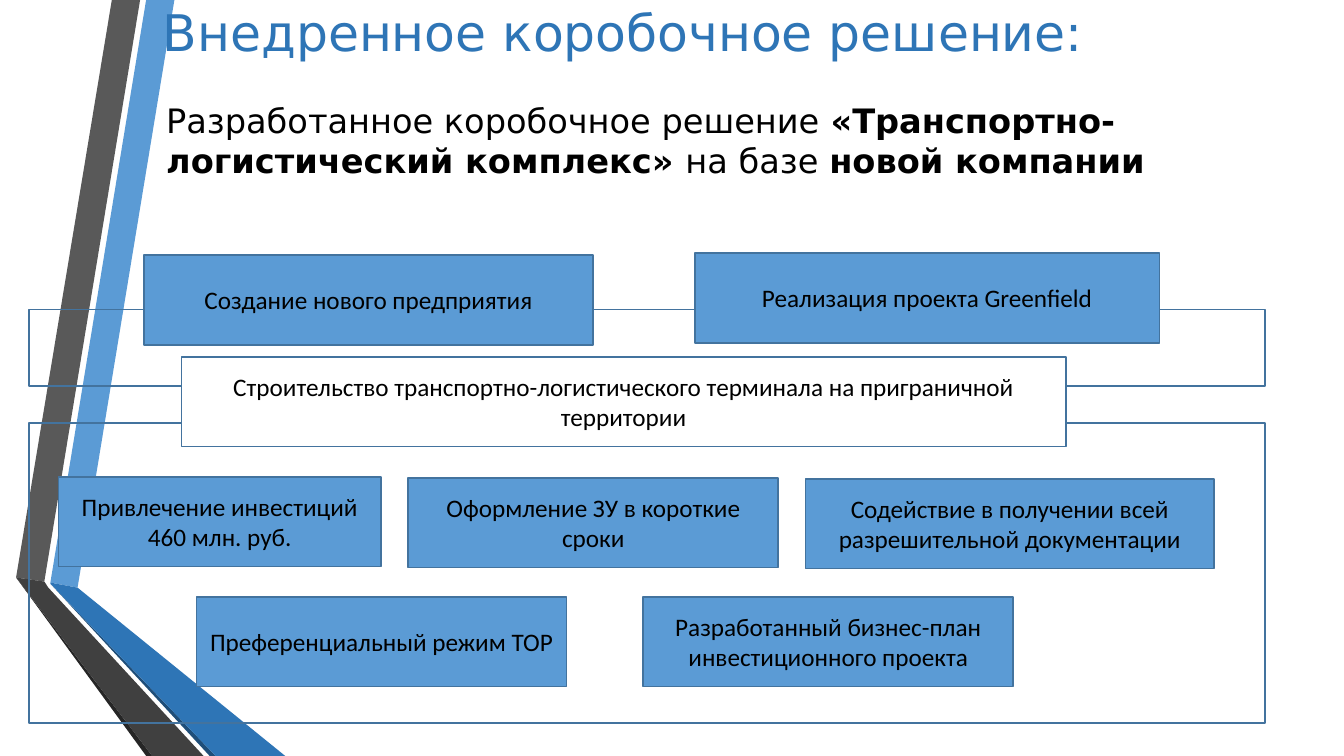
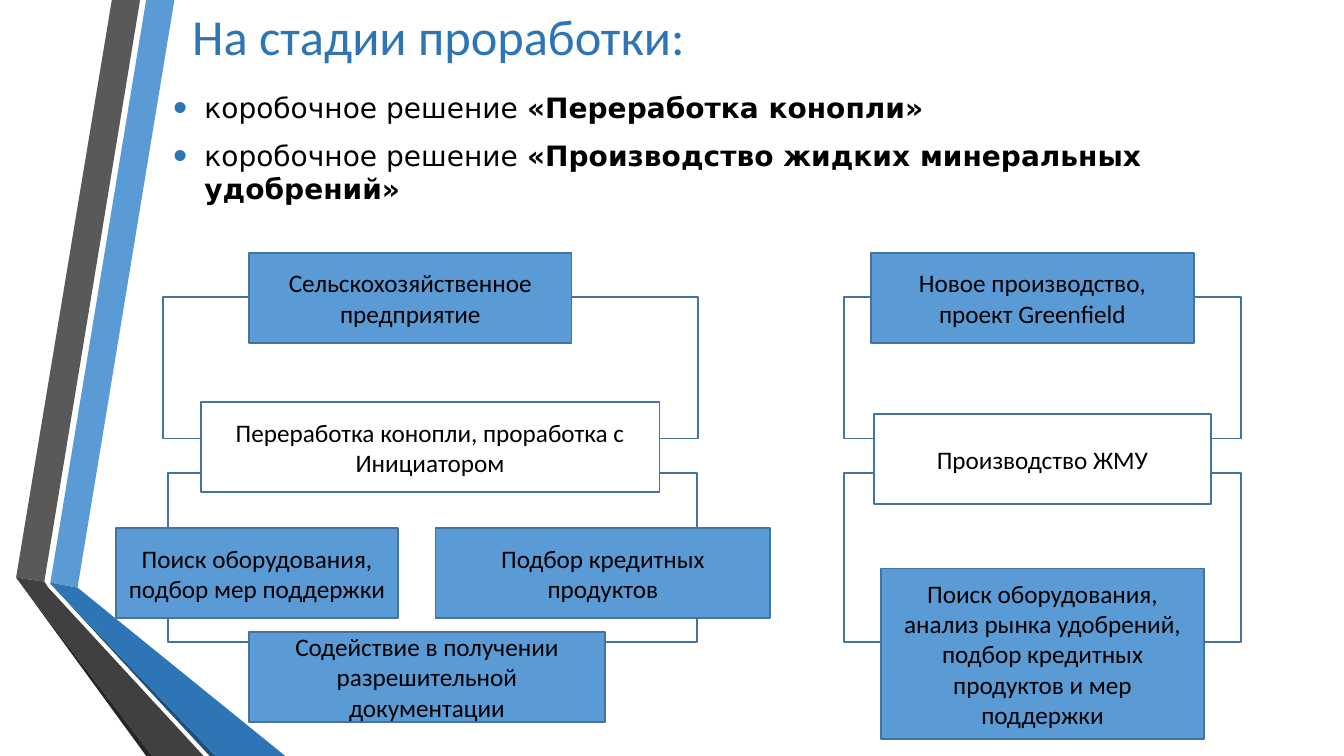
from lxml import etree
from pptx import Presentation
from pptx.dml.color import RGBColor
from pptx.enum.shapes import MSO_SHAPE as Shape
from pptx.enum.text import MSO_ANCHOR as Anchor, PP_ALIGN as Align
from pptx.oxml.ns import qn
from pptx.util import Inches, Pt

BLACK = RGBColor(0x00, 0x00, 0x00)
WHITE = RGBColor(0xFF, 0xFF, 0xFF)
BLUE = RGBColor(0x5B, 0x9B, 0xD5)
MID_BLUE = RGBColor(0x2E, 0x75, 0xB6)
DEEP_BLUE = RGBColor(0x1F, 0x4E, 0x79)
OUTLINE = RGBColor(0x43, 0x73, 0x9E)
GREY = RGBColor(0x59, 0x59, 0x59)
DARK_GREY = RGBColor(0x40, 0x40, 0x40)
NEAR_BLACK = RGBColor(0x26, 0x26, 0x26)

CALIBRI = "Calibri"
DEJAVU = "DejaVu Sans"
BOX_HEIGHT = 0.89

RIBBONS = [
    (BLUE, [(0.5, 5.78), (0.77, 5.83), (1.73, 0), (1.45, 0)]),
    (GREY, [(1.39, 0), (1.11, 0), (0.16, 5.73), (0.44, 5.77)]),
    (NEAR_BLACK, [(0.16, 5.73), (1.45, 7.5), (1.51, 7.5)]),
    (DEEP_BLUE, [(0.5, 5.79), (2.08, 7.5), (2.14, 7.5)]),
    (MID_BLUE, [(0.5, 5.79), (2.14, 7.5), (2.83, 7.5), (0.77, 5.83), (0.5, 5.78)]),
    (DARK_GREY, [(2.02, 7.5), (0.48, 5.83), (0.44, 5.77), (0.16, 5.73), (1.51, 7.5)]),
]


class Slides:
    """Holds the shared style and the page being drawn."""

    def __init__(self):
        self.deck = Presentation()
        self.deck.slide_width = Inches(13.33)
        self.deck.slide_height = Inches(7.5)
        self.page = None

    def new_page(self):
        self.page = self.deck.slides.add_slide(self.deck.slide_layouts[6])
        for color, points in RIBBONS:
            self.ribbon(color, points)

    def ribbon(self, color, points):
        start, *others = [(Inches(x), Inches(y)) for x, y in points]
        builder = self.page.shapes.build_freeform(*start)
        builder.add_line_segments(others, close=True)
        ribbon = builder.convert_to_shape()
        ribbon.shadow.inherit = False
        ribbon.fill.solid()
        ribbon.fill.fore_color.rgb = color
        ribbon.line.fill.background()

    def style(self, para, size, font, color=BLACK):
        for span in para.runs:
            span.font.size = Pt(size)
            span.font.name = font
            span.font.color.rgb = color

    def text_frame(self, left, top, width, height):
        box = self.page.shapes.add_textbox(
            Inches(left), Inches(top), Inches(width), Inches(height))
        frame = box.text_frame
        frame.word_wrap = True
        frame.vertical_anchor = Anchor.MIDDLE
        return frame

    def title(self, text, left, top, width, font):
        frame = self.text_frame(left, top, width, 0.69)
        frame.text = text
        para = frame.paragraphs[0]
        para.alignment = Align.CENTER
        self.style(para, 36, font, MID_BLUE)

    def body(self, lines, left, top, width, height, size, bulleted=False):
        """Each line is a list of (text, bold) spans."""
        frame = self.text_frame(left, top, width, height)
        for index, spans in enumerate(lines):
            para = frame.add_paragraph() if index else frame.paragraphs[0]
            if index:
                para.space_before = Pt(10)
            for text, bold in spans:
                span = para.add_run()
                span.text = text
                span.font.bold = bold
            self.style(para, size, DEJAVU)
            if bulleted:
                self.bullet(para)

    def bullet(self, para):
        properties = para._p.get_or_add_pPr()
        properties.set("marL", str(Inches(0.31)))
        properties.set("indent", str(-Inches(0.31)))
        color = etree.SubElement(properties, qn("a:buClr"))
        etree.SubElement(color, qn("a:srgbClr"), val=str(MID_BLUE))
        etree.SubElement(properties, qn("a:buSzPct"), val="145000")
        etree.SubElement(properties, qn("a:buFont"), typeface="Arial")
        etree.SubElement(properties, qn("a:buChar"), char="•")

    def frame(self, left, top, width, height):
        """Outlined rectangle without a fill."""
        box = self.page.shapes.add_shape(
            Shape.RECTANGLE, Inches(left), Inches(top), Inches(width), Inches(height))
        box.shadow.inherit = False
        box.fill.background()
        box.line.color.rgb = OUTLINE
        box.line.width = Pt(1.25)
        return box

    def box(self, text, left, top, width, height=BOX_HEIGHT, fill=BLUE):
        box = self.frame(left, top, width, height)
        box.fill.solid()
        box.fill.fore_color.rgb = fill
        box.text_frame.word_wrap = True
        box.text_frame.vertical_anchor = Anchor.MIDDLE
        box.text_frame.text = text
        for para in box.text_frame.paragraphs:
            para.alignment = Align.CENTER
            self.style(para, 18, CALIBRI)


def implemented_solution(slides):
    slides.new_page()
    slides.title("Внедренное коробочное решение:", 0.29, -0.03, 11.78, DEJAVU)
    slides.body([[("Разработанное коробочное решение ", False),
                  ("«Транспортно-логистический комплекс» ", True),
                  ("на базе ", False),
                  ("новой компании", True)]],
                1.55, 0.94, 11.7, 0.9, 24)
    slides.frame(0.29, 3.07, 12.26, 0.76)
    slides.frame(0.29, 4.2, 12.26, 2.97)
    slides.box("Создание нового предприятия", 1.43, 2.53, 4.45)
    slides.box("Реализация проекта Greenfield", 6.89, 2.51, 4.61)
    slides.box("Строительство транспортно-логистического терминала "
               "на приграничной территории", 1.8, 3.54, 8.77, fill=WHITE)
    slides.box("Привлечение инвестиций\n460 млн. руб.", 0.58, 4.73, 3.2)
    slides.box("Оформление ЗУ в короткие сроки", 4.05, 4.74, 3.67)
    slides.box("Содействие в получении всей разрешительной документации",
               7.99, 4.75, 4.05)
    slides.box("Преференциальный режим ТОР", 1.95, 5.92, 3.67)
    slides.box("Разработанный бизнес-план инвестиционного проекта", 6.38, 5.92, 3.67)


def solutions_in_progress(slides):
    slides.new_page()
    slides.title("На стадии проработки:", 0.35, 0.01, 8, CALIBRI)
    names = ["«Переработка конопли»", "«Производство жидких минеральных удобрений»"]
    slides.body([[("коробочное решение ", False), (name, True)] for name in names],
                1.62, 0.87, 10.93, 1.2, 20, bulleted=True)

    slides.frame(1.62, 2.95, 5.3, 1.4)
    slides.frame(1.67, 4.69, 5.24, 1.68)
    slides.box("Сельскохозяйственное предприятие", 2.47, 2.51, 3.2)
    slides.box("Переработка конопли, проработка с Инициатором",
               1.99, 3.99, 4.55, fill=WHITE)
    slides.box("Поиск оборудования, подбор мер поддержки", 1.15, 5.24, 2.8)
    slides.box("Подбор кредитных продуктов", 4.32, 5.24, 3.32)
    slides.box("Содействие в получении разрешительной документации", 2.47, 6.27, 3.53)

    slides.frame(8.37, 2.95, 3.94, 1.4)
    slides.frame(8.37, 4.69, 3.94, 1.68)
    slides.box("Новое производство, проект Greenfield", 8.64, 2.51, 3.2)
    slides.box("Производство ЖМУ", 8.67, 4.11, 3.34, fill=WHITE)
    slides.box("Поиск оборудования, анализ рынка удобрений, "
               "подбор кредитных продуктов и мер поддержки", 8.74, 5.64, 3.2, 1.69)


def main():
    slides = Slides()
    implemented_solution(slides)
    solutions_in_progress(slides)
    slides.deck.save("out.pptx")


if __name__ == "__main__":
    main()
